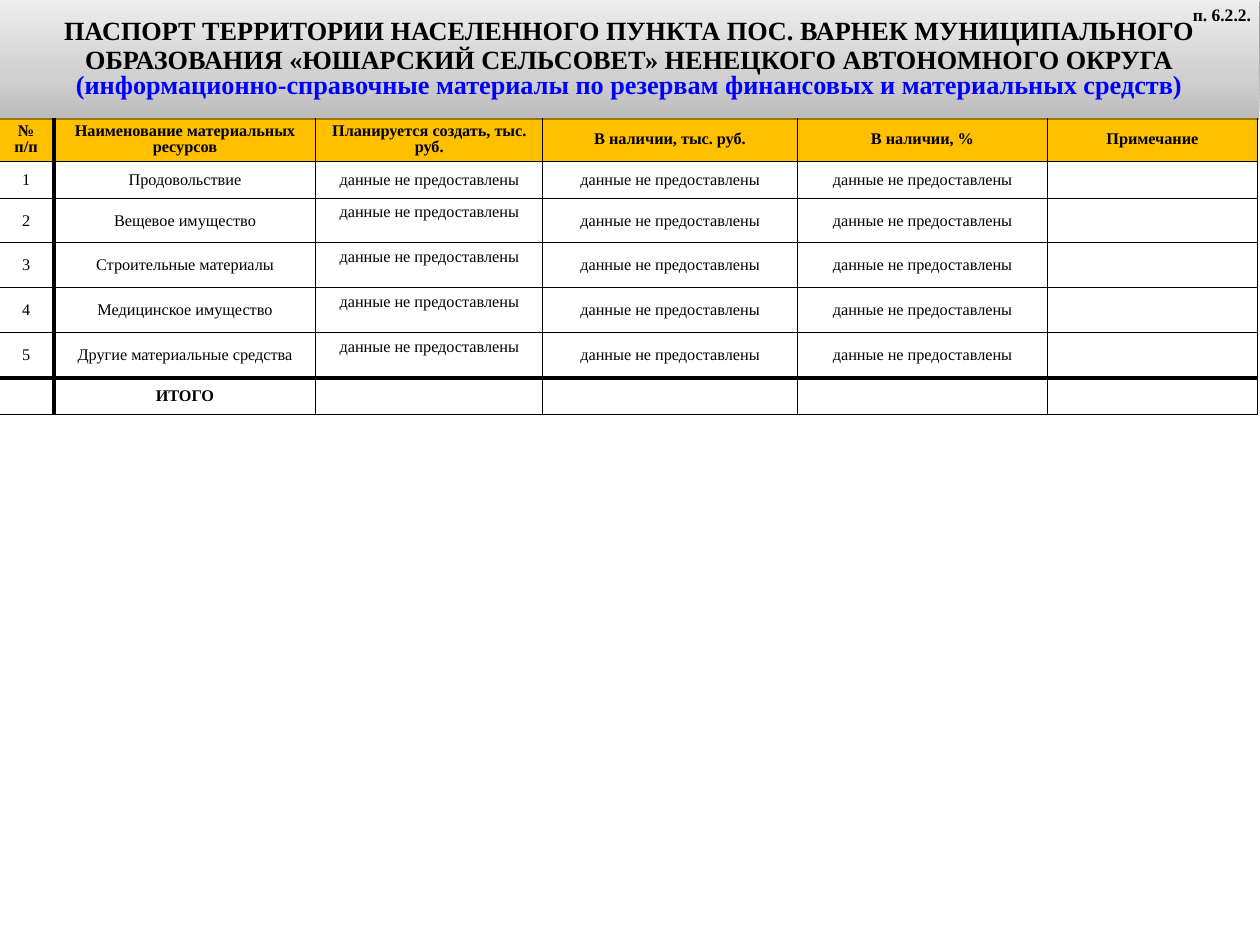
from lxml.etree import SubElement
from copy import deepcopy
from pptx import Presentation
from pptx.dml.color import RGBColor
from pptx.enum.shapes import MSO_SHAPE
from pptx.enum.text import MSO_ANCHOR, PP_ALIGN
from pptx.oxml import parse_xml
from pptx.oxml.ns import nsdecls, qn
from pptx.util import Inches, Pt

COLORS = {"black": "000000", "blue": "0000FF", "gold": "FFC000",
          "dark": "BCBCBC", "middle": "D0D0D0", "light": "EDEDED"}
FONT = "Times New Roman"
COLUMN_WIDTHS = [0.62, 2.91, 2.52, 2.83, 2.78, 2.33]
ROW_HEIGHTS = [0.49, 0.41, 0.49, 0.5, 0.5, 0.5, 0.41]
PLANNED_COLUMN = 2
HEADINGS = ["№ п/п", "Наименование материальных ресурсов",
            "Планируется создать, тыс. руб.", "В наличии, тыс. руб.",
            "В наличии, %", "Примечание"]
RESOURCES = ["Продовольствие", "Вещевое имущество", "Строительные материалы",
             "Медицинское имущество", "Другие материальные средства"]
NO_DATA = "данные не предоставлены"


def write_text(paragraph, text, size=13, color="black", bold=False,
               align=PP_ALIGN.CENTER, spacing=None):
    paragraph.alignment = align
    if spacing:
        paragraph.line_spacing = spacing
    run = paragraph.add_run()
    run.text = text
    run.font.name = FONT
    run.font.size = Pt(size)
    run.font.bold = bold
    run.font.color.rgb = RGBColor.from_string(COLORS[color])


def set_borders(cell, **widths):
    properties = cell._tc.get_or_add_tcPr()
    for index, (side, width) in enumerate(widths.items()):
        properties.insert(index, parse_xml(
            f'<a:ln{side} {nsdecls("a")} w="{Pt(width)}"><a:solidFill>'
            f'<a:srgbClr val="{COLORS["black"]}"/></a:solidFill></a:ln{side}>'))


def add_resource_table(slide, left, top, width, height):
    rows = [HEADINGS]
    rows += [[str(number), name, NO_DATA, NO_DATA, NO_DATA, ""]
             for number, name in enumerate(RESOURCES, 1)]
    rows.append(["", "ИТОГО", "", "", "", ""])
    last = len(rows) - 1
    table = slide.shapes.add_table(
        len(rows), len(HEADINGS), left, top, width, height).table
    table.first_row = False
    table.horz_banding = False
    for column, column_width in zip(table.columns, COLUMN_WIDTHS):
        column.width = Inches(column_width)
    for row, row_height in zip(table.rows, ROW_HEIGHTS):
        row.height = Inches(row_height)

    for row_index, texts in enumerate(rows):
        for column_index, text in enumerate(texts):
            cell = table.cell(row_index, column_index)
            cell.vertical_anchor = MSO_ANCHOR.MIDDLE
            if row_index == 0:
                cell.fill.solid()
                cell.fill.fore_color.rgb = RGBColor.from_string(COLORS["gold"])
            else:
                cell.fill.background()
            set_borders(cell,
                        L=3 if column_index == 1 else 1,
                        R=3 if column_index == 0 else 1,
                        T=3 if row_index == last else 1,
                        B=3 if row_index == last - 1 else 1)
            if column_index == PLANNED_COLUMN and 1 < row_index < last:
                cell.margin_bottom = Inches(0.24)
            if text:
                write_text(cell.text_frame.paragraphs[0], text,
                           bold=row_index in (0, last),
                           spacing=0.9 if row_index == 0 else None)


def add_header(slide, left, top, width, height):
    shape = slide.shapes.add_shape(MSO_SHAPE.RECTANGLE, left, top, width, height)
    shape.line.fill.background()
    shape.fill.gradient()
    shape.fill.gradient_angle = 90
    stop_list = shape._element.spPr.find(qn("a:gradFill")).find(qn("a:gsLst"))
    stop_list.insert(1, deepcopy(stop_list[0]))
    stops = zip(shape.fill.gradient_stops, (0, 0.35, 1), ("dark", "middle", "light"))
    for stop, position, color in stops:
        stop.position = position
        stop.color.rgb = RGBColor.from_string(COLORS[color])

    shape.shadow.inherit = False
    effects = shape._element.spPr.find(qn("a:effectLst"))
    shadow = SubElement(effects, qn("a:outerShdw"), blurRad="0",
                        dist=str(Pt(1.6)), dir="5400000", rotWithShape="0")
    shadow_color = SubElement(shadow, qn("a:srgbClr"), val=COLORS["black"])
    SubElement(shadow_color, qn("a:alpha"), val="38000")

    frame = shape.text_frame
    frame.word_wrap = True
    frame.vertical_anchor = MSO_ANCHOR.MIDDLE
    write_text(frame.paragraphs[0],
               "ПАСПОРТ ТЕРРИТОРИИ НАСЕЛЕННОГО ПУНКТА ПОС. ВАРНЕК МУНИЦИПАЛЬНОГО "
               "ОБРАЗОВАНИЯ «ЮШАРСКИЙ СЕЛЬСОВЕТ» НЕНЕЦКОГО АВТОНОМНОГО ОКРУГА",
               size=21, bold=True, spacing=0.9)
    write_text(frame.add_paragraph(),
               "(информационно-справочные материалы по резервам финансовых "
               "и материальных средств)",
               size=21, bold=True, color="blue", spacing=0.8)


def add_section_number(slide, left, top, width, height):
    frame = slide.shapes.add_textbox(left, top, width, height).text_frame
    frame.word_wrap = True
    write_text(frame.paragraphs[0], "п. 6.2.2.", size=14, bold=True,
               align=PP_ALIGN.RIGHT)


def main():
    presentation = Presentation()
    presentation.slide_width = Inches(14)
    presentation.slide_height = Inches(10.5)
    slide = presentation.slides.add_slide(presentation.slide_layouts[6])
    add_resource_table(slide, Inches(-0.02), Inches(1.31), Inches(14), Inches(3.3))
    add_header(slide, Inches(-0.01), Inches(0), Inches(14), Inches(1.31))
    add_section_number(slide, Inches(13.06), Inches(0), Inches(0.94), Inches(0.33))
    presentation.save("out.pptx")


if __name__ == "__main__":
    main()
